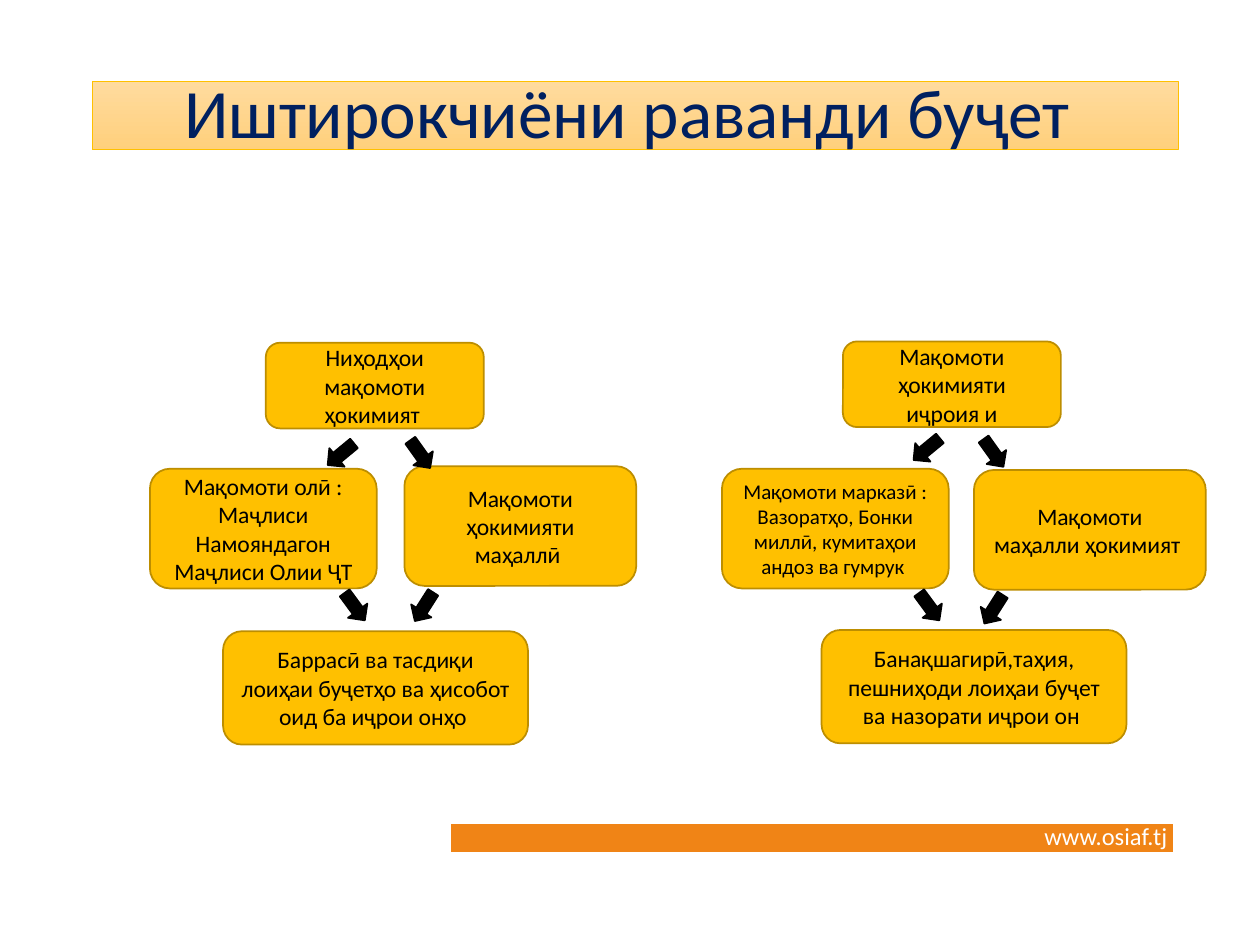
import pptx
import pptx.util
import pptx.dml.color
import pptx.enum.shapes
import pptx.enum.text
import pptx.oxml.ns
import lxml.etree

Inches = pptx.util.Inches
Pt = pptx.util.Pt
MSO_SHAPE = pptx.enum.shapes.MSO_SHAPE
PP_ALIGN = pptx.enum.text.PP_ALIGN
MSO_ANCHOR = pptx.enum.text.MSO_ANCHOR

COLORS = {
    "amber": "FFC000",
    "amber_edge": "BD8E00",
    "title_top": "FFDB9E",
    "title_bottom": "FFD07C",
    "navy": "002060",
    "orange": "F08416",
    "black": "000000",
    "white": "FFFFFF",
}


def color(name):
    return pptx.dml.color.RGBColor.from_string(COLORS[name])


def add_text(paragraph, text, size, color_name):
    run = paragraph.add_run()
    run.text = text
    run.font.name = "Calibri"
    run.font.size = Pt(size)
    run.font.color.rgb = color(color_name)


presentation = pptx.Presentation()
presentation.slide_width = Inches(10)
presentation.slide_height = Inches(7.5)
slide = presentation.slides.add_slide(presentation.slide_layouts[5])

footer_bar = slide.shapes.add_connector(
    pptx.enum.shapes.MSO_CONNECTOR.STRAIGHT,
    Inches(3.58), Inches(6.65), Inches(9.31), Inches(6.65))
footer_bar.line.color.rgb = color("orange")
footer_bar.line.width = Pt(16)
lxml.etree.SubElement(
    footer_bar._element.spPr, pptx.oxml.ns.qn("a:effectLst"))

website = slide.shapes.add_textbox(
    Inches(8.19), Inches(6.47), Inches(1.59), Inches(0.34))
website.text_frame.word_wrap = True
add_text(website.text_frame.paragraphs[0], "www.osiaf.tj", 14, "white")

title = slide.shapes.title
title.left, title.top = Inches(0.73), Inches(0.65)
title.width, title.height = Inches(8.62), Inches(0.54)
title.fill.gradient()
title.fill.gradient_angle = 270
for stop, name in zip(title.fill.gradient_stops, ("title_top", "title_bottom")):
    stop.color.rgb = color(name)
title.line.color.rgb = color("amber")
title.line.width = Pt(0.5)
title.text_frame.auto_size = pptx.enum.text.MSO_AUTO_SIZE.NONE
title.text_frame.vertical_anchor = MSO_ANCHOR.MIDDLE
title_paragraph = title.text_frame.paragraphs[0]
title_paragraph.alignment = PP_ALIGN.CENTER
title_paragraph.line_spacing = 0.9
add_text(title_paragraph, "Иштирокчиёни раванди буҷет ", 39.6, "navy")

boxes = [
    (2.11, 2.72, 1.73, 0.68, 13.5, "Ниҳодҳои мақомоти ҳокимият "),
    (1.19, 3.72, 1.8, 0.95, 13.5,
     "Мақомоти олӣ : Маҷлиси Намояндагон Маҷлиси Олии ҶТ"),
    (3.21, 3.7, 1.84, 0.95, 13.5, "Мақомоти ҳокимияти маҳаллӣ "),
    (1.77, 5.01, 2.42, 0.9, 13.5,
     "Баррасӣ ва тасдиқи лоиҳаи буҷетҳо ва ҳисобот оид ба иҷрои онҳо "),
    (6.69, 2.71, 1.73, 0.68, 13.5, "Мақомоти ҳокимияти иҷроия и"),
    (5.73, 3.72, 1.8, 0.95, 12,
     "Мақомоти марказӣ : Вазоратҳо, Бонки миллӣ, кумитаҳои андоз ва гумрук "),
    (7.73, 3.73, 1.84, 0.95, 13.5, "Мақомоти маҳалли ҳокимият "),
    (6.52, 5, 2.42, 0.9, 13.5,
     "Банақшагирӣ,таҳия, пешниҳоди лоиҳаи буҷет ва назорати иҷрои он "),
]
for left, top, width, height, size, text in boxes:
    box = slide.shapes.add_shape(
        MSO_SHAPE.ROUNDED_RECTANGLE,
        Inches(left), Inches(top), Inches(width), Inches(height))
    box.shadow.inherit = False
    box.fill.solid()
    box.fill.fore_color.rgb = color("amber")
    box.line.color.rgb = color("amber_edge")
    box.line.width = Pt(1)
    box.text_frame.word_wrap = True
    box.text_frame.vertical_anchor = MSO_ANCHOR.MIDDLE
    paragraph = box.text_frame.paragraphs[0]
    paragraph.alignment = PP_ALIGN.CENTER
    add_text(paragraph, text, size, "black")

arrows = [
    (2.57, 3.51, 140.5), (3.2, 3.51, 54.5),
    (2.68, 4.72, 53.7), (3.23, 4.72, 122.5),
    (7.22, 3.47, 140.5), (7.75, 3.5, 54.5),
    (7.24, 4.72, 53.7), (7.75, 4.74, 122.5),
]
for left, top, rotation in arrows:
    arrow = slide.shapes.add_shape(
        MSO_SHAPE.RIGHT_ARROW,
        Inches(left), Inches(top), Inches(0.27), Inches(0.19))
    arrow.rotation = rotation
    arrow.shadow.inherit = False
    arrow.fill.solid()
    arrow.fill.fore_color.rgb = color("black")
    arrow.line.color.rgb = color("black")
    arrow.line.width = Pt(1)

presentation.save("out.pptx")
